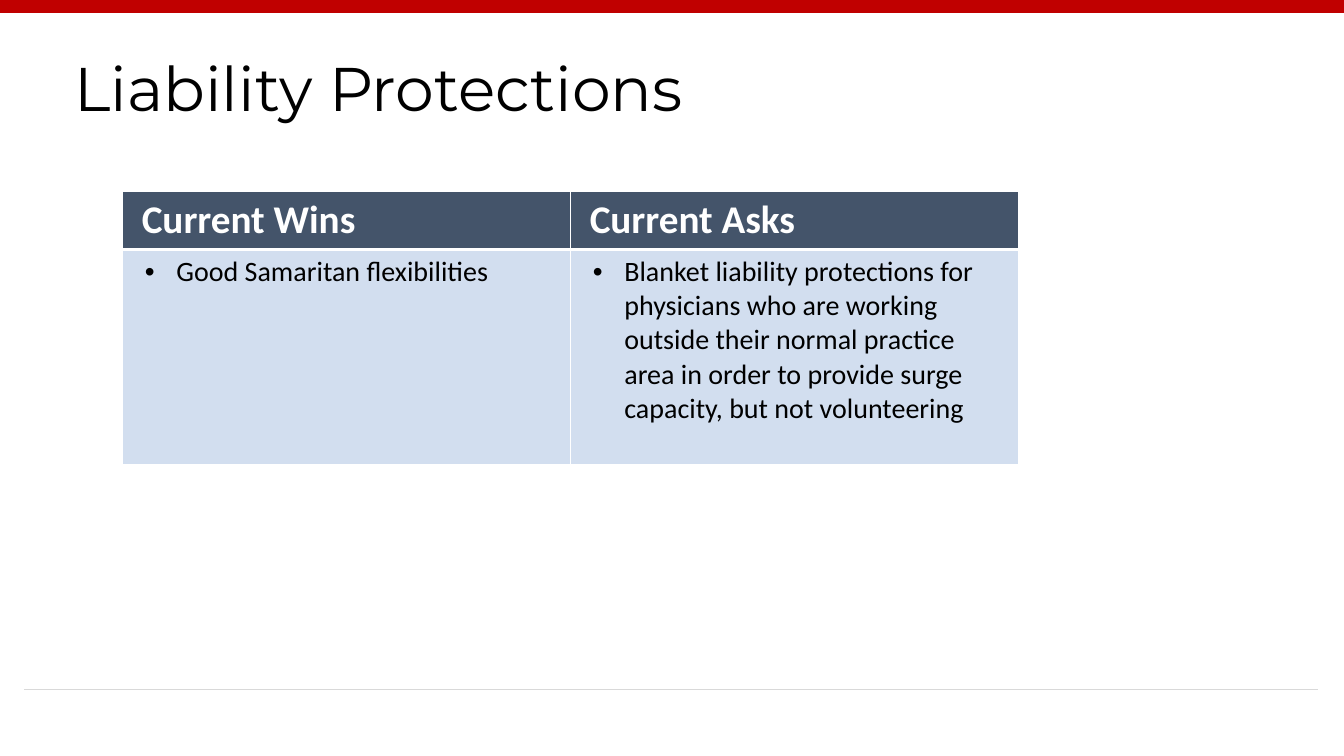
import pptx
import pptx.dml.color
import pptx.enum.shapes
import pptx.enum.text
import pptx.oxml
import pptx.oxml.ns
import pptx.util
from lxml import etree

Pt = pptx.util.Pt
RGBColor = pptx.dml.color.RGBColor
qn = pptx.oxml.ns.qn

RED = RGBColor(0xC0, 0x00, 0x00)
GREY = RGBColor(0xD9, 0xD9, 0xD9)
SLATE = RGBColor(0x44, 0x54, 0x6A)
PALE_BLUE = RGBColor(0xD2, 0xDE, 0xEF)
BLACK = RGBColor(0x00, 0x00, 0x00)
WHITE = RGBColor(0xFF, 0xFF, 0xFF)


class SlideBuilder:
    """Holds the style and the current slide."""

    title_font = "Montserrat"
    body_font = "Calibri"

    def __init__(self, slide):
        self.slide = slide

    def title(self, text, left, top, width, height):
        heading = self.slide.shapes.title
        heading.left, heading.top = Pt(left), Pt(top)
        heading.width, heading.height = Pt(width), Pt(height)
        frame = heading.text_frame
        frame.text = text
        frame.word_wrap = True
        frame.vertical_anchor = pptx.enum.text.MSO_ANCHOR.MIDDLE
        line = frame.paragraphs[0]
        line.alignment = pptx.enum.text.PP_ALIGN.LEFT
        line.line_spacing = 0.9
        self.style(line, self.title_font, 44, BLACK)

    def rule(self, left, right, y, color, weight):
        stroke = self.slide.shapes.add_connector(
            pptx.enum.shapes.MSO_CONNECTOR.STRAIGHT, Pt(left), Pt(y), Pt(right), Pt(y))
        stroke.line.color.rgb = color
        stroke.line.width = Pt(weight)
        etree.SubElement(stroke._element.spPr, qn("a:effectLst"))

    def table(self, headers, points, left, top, column_width, row_heights):
        columns = len(headers)
        grid = self.slide.shapes.add_table(
            2, columns, Pt(left), Pt(top),
            Pt(column_width * columns), Pt(sum(row_heights))).table
        for row, height in zip(grid.rows, row_heights):
            row.height = Pt(height)
        for index, (header, point) in enumerate(zip(headers, points)):
            grid.columns[index].width = Pt(column_width)
            self.header_cell(grid.cell(0, index), header)
            self.point_cell(grid.cell(1, index), point)

    def header_cell(self, cell, text):
        self.borders(cell, top=1, bottom=3)
        self.fill(cell, SLATE)
        cell.margin_left = Pt(13.5)
        cell.text_frame.text = text
        self.style(cell.text_frame.paragraphs[0], self.body_font, 28, WHITE, True)

    def point_cell(self, cell, text):
        self.borders(cell, top=3, bottom=1)
        self.fill(cell, PALE_BLUE)
        cell.text_frame.text = text
        point = cell.text_frame.paragraphs[0]
        properties = point._p.get_or_add_pPr()
        properties.set("marL", str(Pt(31)))
        properties.set("indent", str(Pt(-22.5)))
        etree.SubElement(properties, qn("a:buFont"), typeface="Arial")
        etree.SubElement(properties, qn("a:buChar"), char="•")
        self.style(point, self.body_font, 20, BLACK)

    def borders(self, cell, top, bottom):
        properties = cell._tc.get_or_add_tcPr()
        for side, weight in (("L", 1), ("R", 1), ("T", top), ("B", bottom)):
            edge = etree.SubElement(properties, qn(f"a:ln{side}"), w=str(Pt(weight)))
            paint = etree.SubElement(edge, qn("a:solidFill"))
            etree.SubElement(paint, qn("a:srgbClr"), val=str(WHITE))

    def fill(self, cell, color):
        cell.fill.solid()
        cell.fill.fore_color.rgb = color

    def style(self, paragraph, font, size, color, bold=False):
        for run in paragraph.runs:
            run.font.name = font
            run.font.size = Pt(size)
            run.font.color.rgb = color
            run.font.bold = bold


def main():
    deck = pptx.Presentation()
    deck.slide_width, deck.slide_height = Pt(960), Pt(540)
    title_only = deck.slide_layouts[5]
    builder = SlideBuilder(deck.slides.add_slide(title_only))

    # Top band and footer rule
    builder.rule(0, 960, 4.5, RED, 9)
    builder.rule(17.3, 941.8, 492.3, GREY, 0.5)

    # Title
    builder.title("Liability Protections", 46, 13, 828, 104.4)

    # Wins and asks
    builder.table(
        ["Current Wins", "Current Asks"],
        ["Good Samaritan flexibilities",
         "Blanket liability protections for physicians who are working outside "
         "their normal practice area in order to provide surge capacity, "
         "but not volunteering"],
        left=87.8, top=136.8, column_width=320, row_heights=(41.4, 153.6))

    deck.save("out.pptx")


if __name__ == "__main__":
    main()
